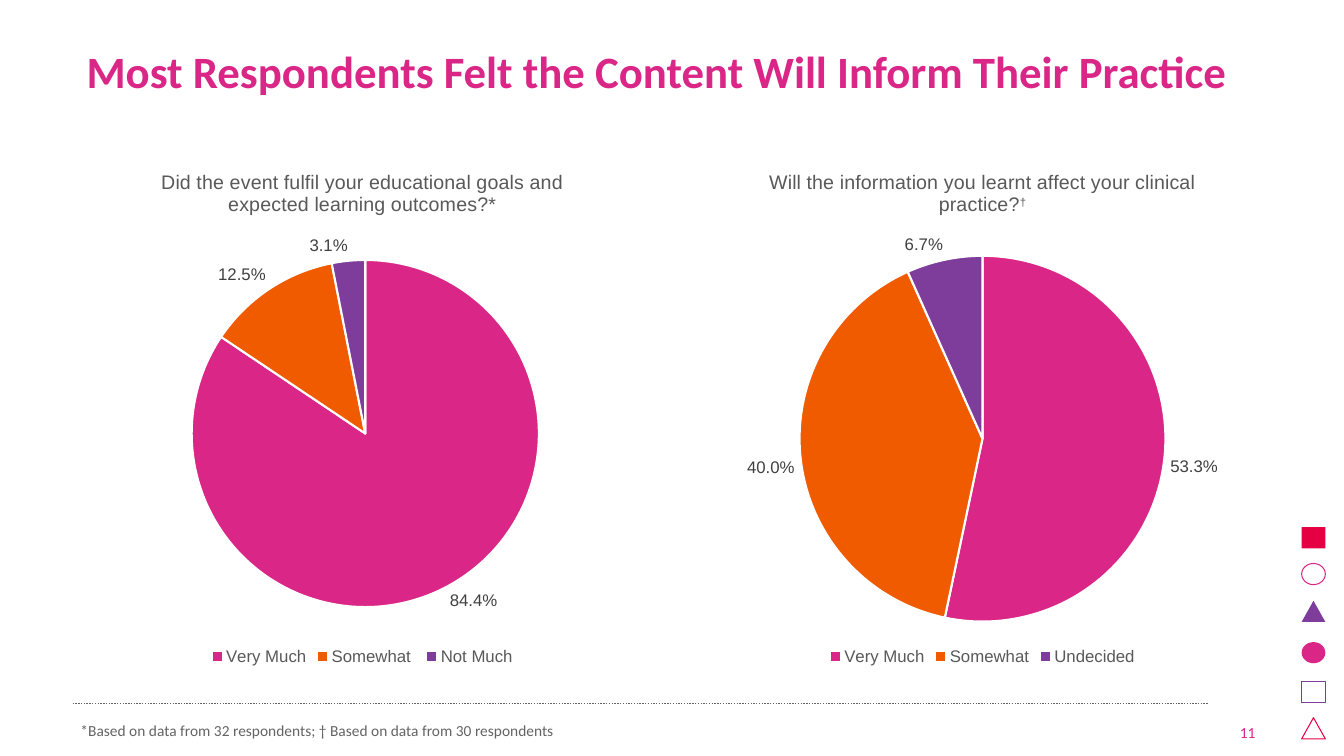
from lxml.etree import SubElement
from pptx import Presentation
from pptx.chart.data import CategoryChartData
from pptx.dml.color import RGBColor
from pptx.enum.chart import XL_CHART_TYPE, XL_LABEL_POSITION, XL_LEGEND_POSITION
from pptx.enum.dml import MSO_LINE
from pptx.enum.shapes import MSO_CONNECTOR, MSO_SHAPE
from pptx.enum.text import MSO_ANCHOR, PP_ALIGN
from pptx.oxml import parse_xml
from pptx.oxml.ns import nsdecls, qn
from pptx.util import Inches, Pt

PINK = RGBColor(0xDA, 0x26, 0x86)
RED = RGBColor(0xE5, 0x00, 0x43)
PURPLE = RGBColor(0x7E, 0x3C, 0x9B)
ORANGE = RGBColor(0xF0, 0x5B, 0x00)
WHITE = RGBColor(0xFF, 0xFF, 0xFF)
GREY = RGBColor(0x64, 0x64, 0x64)
CHART_GREY = RGBColor(0x59, 0x59, 0x59)
LABEL_GREY = RGBColor(0x40, 0x40, 0x40)
ANSWER_COLOURS = (PINK, ORANGE, PURPLE)


def format_font(font, size, colour, name="Calibri", bold=False):
    font.size, font.name, font.bold = Pt(size), name, bold
    font.color.rgb = colour


def write(paragraph, text, *, align=None, line_spacing=None, superscript=False, **font):
    run = paragraph.add_run()
    run.text = text
    format_font(run.font, **font)
    if align is not None:
        paragraph.alignment = align
    if line_spacing:
        paragraph.line_spacing = line_spacing
    if superscript:
        run.font._element.set("baseline", "30000")


def manual_layout(**fractions):
    """Chart layout in fractions of the chart's width and height."""
    layout = parse_xml(f"<c:layout {nsdecls('c')}><c:manualLayout/></c:layout>")
    if "w" in fractions:
        SubElement(layout[0], qn("c:layoutTarget")).set("val", "inner")
    for axis in ("x", "y"):
        SubElement(layout[0], qn(f"c:{axis}Mode")).set("val", "edge")
    for key, value in fractions.items():
        SubElement(layout[0], qn(f"c:{key}")).set("val", str(value))
    return layout


class SurveySlide:
    def __init__(self, presentation):
        self.slide = presentation.slides.add_slide(presentation.slide_layouts[6])
        self.shapes = self.slide.shapes

    def marker(self, kind, top, colour, filled):
        marker = self.shapes.add_shape(
            kind, Inches(12.91), Inches(top), Inches(0.235), Inches(0.21))
        marker.shadow.inherit = False
        if filled:
            marker.fill.solid()
            marker.fill.fore_color.rgb = colour
            marker.line.fill.background()
        else:
            marker.fill.background()
            marker.line.color.rgb = colour
            marker.line.width = Pt(0.75)

    def dotted_rule(self, left, right, y):
        rule = self.shapes.add_connector(
            MSO_CONNECTOR.STRAIGHT, Inches(left), Inches(y), Inches(right), Inches(y))
        rule.line.color.rgb = GREY
        rule.line.width = Pt(1)
        rule.line.dash_style = MSO_LINE.ROUND_DOT
        SubElement(rule._element.spPr, qn("a:effectLst"))

    def text(self, box, text, anchor, **style):
        frame = self.shapes.add_textbox(*map(Inches, box)).text_frame
        frame.word_wrap = True
        frame.vertical_anchor = anchor
        write(frame.paragraphs[0], text, **style)

    def pie(self, left, question, mark, raised, answers, title_at, plot_at):
        data = CategoryChartData(number_format="0.0%")
        data.categories = list(answers)
        data.add_series("Series 1", list(answers.values()))
        chart = self.shapes.add_chart(
            XL_CHART_TYPE.PIE, Inches(left), Inches(1.5),
            Inches(5.67), Inches(5.14), data).chart
        format_font(chart.font, 10, CHART_GREY, "Arial")

        # Question above the pie
        title = chart.chart_title
        heading = title.text_frame.paragraphs[0]
        style = dict(size=14, colour=CHART_GREY, name="Arial")
        write(heading, question, **style)
        write(heading, mark, superscript=raised, **style)
        title._element.find(qn("c:tx")).addnext(manual_layout(**title_at))

        # Legend
        chart.has_legend = True
        chart.legend.position = XL_LEGEND_POSITION.BOTTOM
        chart.legend.include_in_layout = False
        format_font(chart.legend.font, 12, CHART_GREY, "Arial")

        # Slices and labels
        plot = chart.plots[0]
        plot.vary_by_categories = True
        for index, colour in enumerate(ANSWER_COLOURS):
            slice_format = plot.series[0].points[index].format
            slice_format.fill.solid()
            slice_format.fill.fore_color.rgb = colour
            slice_format.line.color.rgb = WHITE
            slice_format.line.width = Pt(1.5)
        plot.has_data_labels = True
        labels = plot.data_labels
        labels.show_value, labels.show_percentage = True, False
        labels.number_format, labels.number_format_is_linked = "0.0%", False
        labels.position = XL_LABEL_POSITION.OUTSIDE_END
        format_font(labels.font, 12, LABEL_GREY, "Arial")
        area = chart._chartSpace.chart.plotArea
        for automatic in area.findall(qn("c:layout")):
            area.remove(automatic)
        area.insert(0, manual_layout(**plot_at))


def main():
    presentation = Presentation()
    presentation.slide_width = Inches(13.33)
    presentation.slide_height = Inches(7.5)
    survey = SurveySlide(presentation)

    # Markers down the right edge
    for kind, top, colour, filled in (
        (MSO_SHAPE.RECTANGLE, 5.23, RED, True),
        (MSO_SHAPE.OVAL, 5.59, PINK, False),
        (MSO_SHAPE.ISOSCELES_TRIANGLE, 5.96, PURPLE, True),
        (MSO_SHAPE.OVAL, 6.37, PINK, True),
        (MSO_SHAPE.RECTANGLE, 6.76, PURPLE, False),
        (MSO_SHAPE.ISOSCELES_TRIANGLE, 7.12, RED, False),
    ):
        survey.marker(kind, top, colour, filled)

    # Title
    survey.text((0.76, 0.17, 11.81, 1.12),
                "Most Respondents Felt the Content Will Inform Their Practice",
                MSO_ANCHOR.MIDDLE, size=32, colour=PINK, bold=True, line_spacing=0.9)

    # Survey questions
    survey.pie(0.76, "Did the event fulfil your educational goals and "
               "expected learning outcomes?", "*", False,
               {"Very Much": 0.844, "Somewhat ": 0.125, "Not Much": 0.031},
               dict(x=0.15, y=0.04), dict(x=0.2, y=0.21, w=0.61, h=0.67))
    survey.pie(6.91, "Will the information you learnt affect your clinical practice?",
               "†", True,
               {"Very Much": 0.533, "Somewhat": 0.4, "Undecided": 0.067},
               dict(x=0.13, y=0.04), dict(x=0.18, y=0.2, w=0.64, h=0.71))

    # Footer
    survey.dotted_rule(0.72, 11.99, 6.98)
    survey.text((0.7, 6.94, 11.26, 0.45),
                "*Based on data from 32 respondents; † Based on data from 30 respondents",
                MSO_ANCHOR.BOTTOM, size=11, colour=GREY)
    survey.text((12.12, 7.01, 0.43, 0.4), "11", MSO_ANCHOR.BOTTOM,
                size=11, colour=PINK, align=PP_ALIGN.RIGHT)

    presentation.save("out.pptx")


if __name__ == "__main__":
    main()
